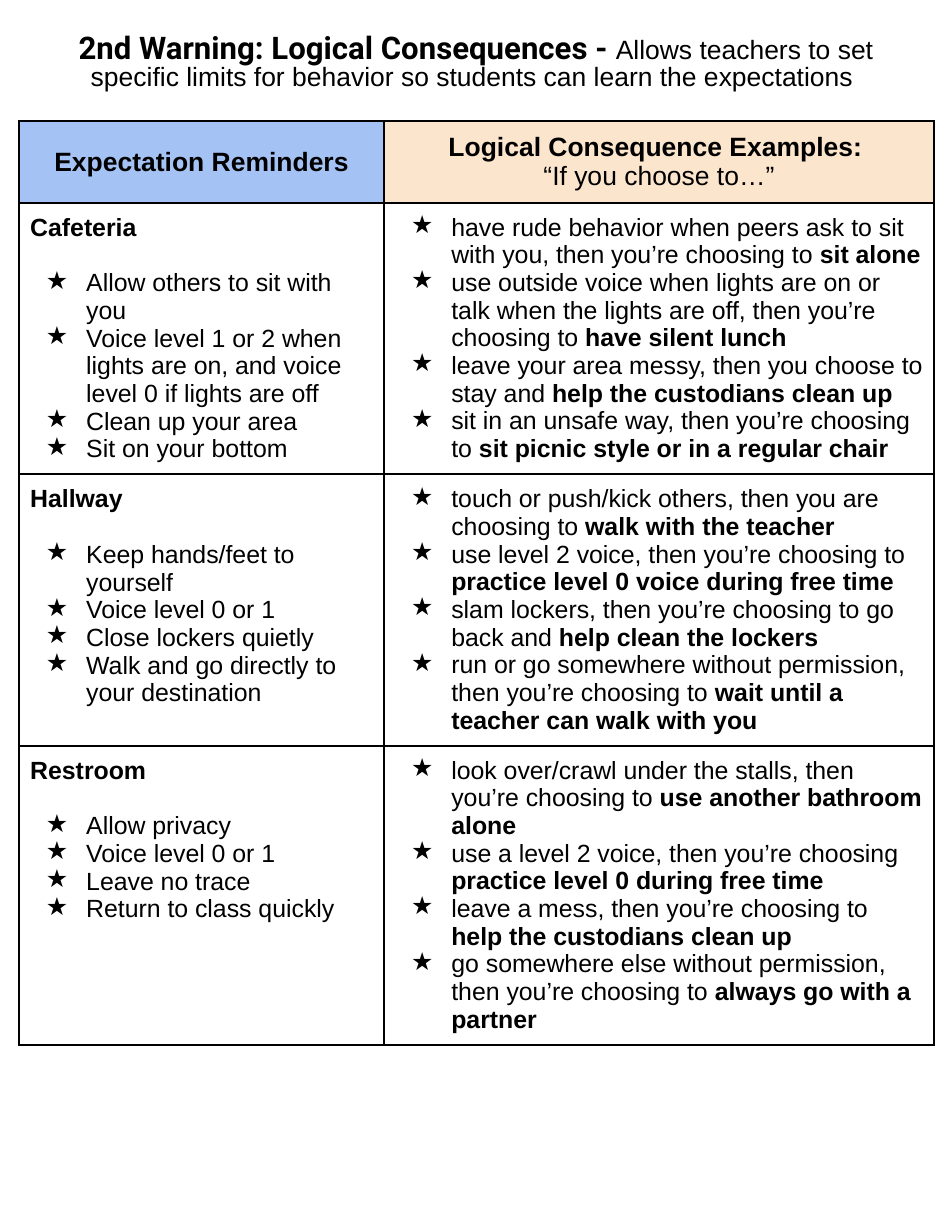
"""Builds a one-page table of logical consequences for school areas."""
from lxml import etree
from pptx import Presentation
from pptx.dml.color import RGBColor
from pptx.enum.text import MSO_ANCHOR, PP_ALIGN
from pptx.oxml.ns import qn
from pptx.util import Inches, Pt

CENTER, MIDDLE, TOP = PP_ALIGN.CENTER, MSO_ANCHOR.MIDDLE, MSO_ANCHOR.TOP
BLACK = RGBColor(0, 0, 0)
BLUE = RGBColor(0xA4, 0xC2, 0xF4)
PEACH = RGBColor(0xFC, 0xE5, 0xCD)

TITLE = (
    ("2nd Warning: Logical Consequences - ", 20, True, "Roboto"),
    ("Allows teachers to set specific limits for behavior so students can "
     "learn the expectations ", 17, False, "Arial"),
)
HEADS = (
    (BLUE, MIDDLE, [("Expectation Reminders", True)]),
    (PEACH, TOP, [("Logical Consequence Examples: ", True),
                  ("“If you choose to…”", False)]),
)
AREAS = (
    ("Cafeteria",
     ["Allow others to sit with you",
      "Voice level 1 or 2 when lights are on, and voice level 0 if lights are off",
      "Clean up your area",
      "Sit on your bottom"],
     [("have rude behavior when peers ask to sit with you, then you’re choosing to ",
       "sit alone"),
      ("use outside voice when lights are on or talk when the lights are off, "
       "then you’re choosing to ", "have silent lunch"),
      ("leave your area messy, then you choose to stay and ",
       "help the custodians clean up"),
      ("sit in an unsafe way, then you’re choosing to ",
       "sit picnic style or in a regular chair")]),
    ("Hallway",
     ["Keep hands/feet to yourself",
      "Voice level 0 or 1",
      "Close lockers quietly",
      "Walk and go directly to your destination"],
     [("touch or push/kick others, then you are choosing to ",
       "walk with the teacher"),
      ("use level 2 voice, then you’re choosing to ",
       "practice level 0 voice during free time"),
      ("slam lockers, then you’re choosing to go back and",
       " help clean the lockers"),
      ("run or go somewhere without permission, then you’re choosing to ",
       "wait until a teacher can walk with you")]),
    ("Restroom",
     ["Allow privacy",
      "Voice level 0 or 1",
      "Leave no trace",
      "Return to class quickly"],
     [("look over/crawl under the stalls, then you’re choosing to ",
       "use another bathroom alone"),
      ("use a level 2 voice, then you’re choosing ",
       "practice level 0 during free time"),
      ("leave a mess, then you’re choosing to ",
       "help the custodians clean up"),
      ("go somewhere else without permission, then you’re choosing to ",
       "always go with a partner")]),
)
COLS = (3.26, 4.91)
ROWS = (0.73, 2.42, 2.42, 2.67)
PAD = Inches(0.1)


def add_run(para, text, size, bold, face="Arial"):
    run = para.add_run()
    run.text = text
    font = run.font
    font.size, font.bold, font.name = Pt(size), bold, face
    font.color.rgb = BLACK


def next_para(frame):
    first = frame.paragraphs[0]
    return frame.add_paragraph() if first.runs else first


def add_star(frame, parts):
    para = next_para(frame)
    props = para._p.get_or_add_pPr()
    props.set("marL", str(Inches(0.5)))
    props.set("indent", str(Inches(-0.36)))
    tint = etree.SubElement(props, qn("a:buClr"))
    etree.SubElement(tint, qn("a:srgbClr"), val=str(BLACK))
    etree.SubElement(props, qn("a:buChar"), char="★")
    for text, bold in parts:
        add_run(para, text, 16, bold)


def set_pad(box):
    box.margin_left = box.margin_right = PAD
    box.margin_top = box.margin_bottom = PAD


def set_cell(cell):
    set_pad(cell)
    props = cell._tc.get_or_add_tcPr()
    for side in ("lnL", "lnR", "lnT", "lnB"):
        line = etree.SubElement(props, qn(f"a:{side}"), w=str(Pt(1.5)))
        fill = etree.SubElement(line, qn("a:solidFill"))
        etree.SubElement(fill, qn("a:srgbClr"), val=str(BLACK))
    cell.fill.background()


def add_grid(slide):
    grid = slide.shapes.add_table(
        len(ROWS), len(COLS), Inches(0.17), Inches(1.08),
        Inches(sum(COLS)), Inches(sum(ROWS))).table
    grid.first_row = grid.horz_banding = False
    for col, width in zip(grid.columns, COLS):
        col.width = Inches(width)
    for row, height in zip(grid.rows, ROWS):
        row.height = Inches(height)
    for cell in grid.iter_cells():
        set_cell(cell)
    for col, (color, anchor, lines) in enumerate(HEADS):
        cell = grid.cell(0, col)
        cell.fill.solid()
        cell.fill.fore_color.rgb = color
        cell.vertical_anchor = anchor
        for text, bold in lines:
            para = next_para(cell.text_frame)
            para.alignment = CENTER
            add_run(para, text, 17, bold)
    for row, (name, rules, results) in enumerate(AREAS, 1):
        left, right = (grid.cell(row, col).text_frame for col in range(2))
        para = left.paragraphs[0]
        para.space_after = Pt(18)
        add_run(para, name, 16, True)
        for rule in rules:
            add_star(left, [(rule, False)])
        for cause, effect in results:
            add_star(right, [(cause, False), (effect, True)])


def add_title(slide):
    frame = slide.shapes.add_textbox(
        Inches(0.29), Inches(0.22), Inches(7.92), Inches(0.76)).text_frame
    frame.word_wrap = True
    set_pad(frame)
    para = frame.paragraphs[0]
    para.alignment, para.line_spacing = CENTER, 0.8
    for part in TITLE:
        add_run(para, *part)


def main():
    deck = Presentation()
    deck.slide_width, deck.slide_height = Inches(8.5), Inches(11)
    slide = deck.slides.add_slide(deck.slide_layouts[6])
    add_grid(slide)
    add_title(slide)
    deck.save("out.pptx")


if __name__ == "__main__":
    main()
